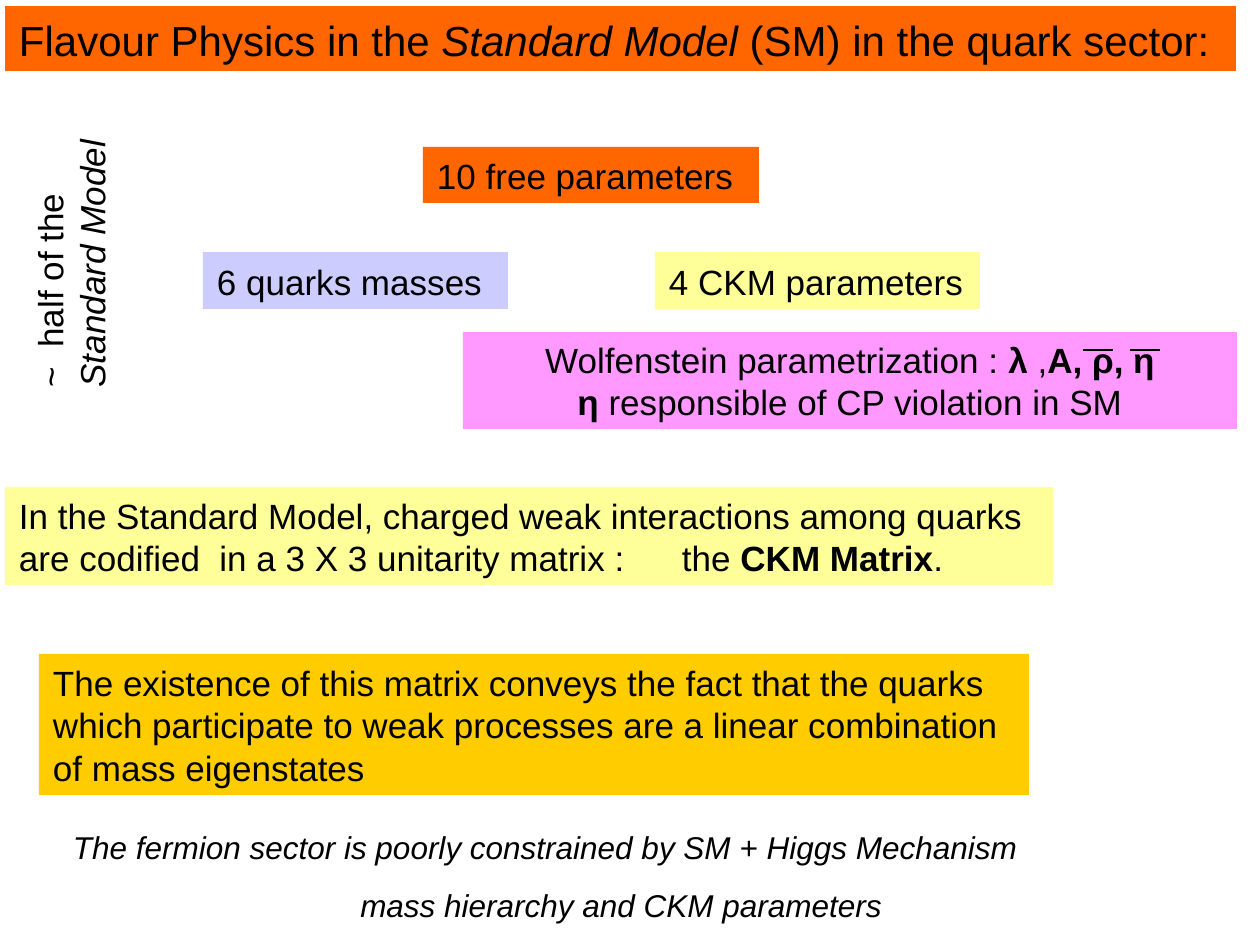
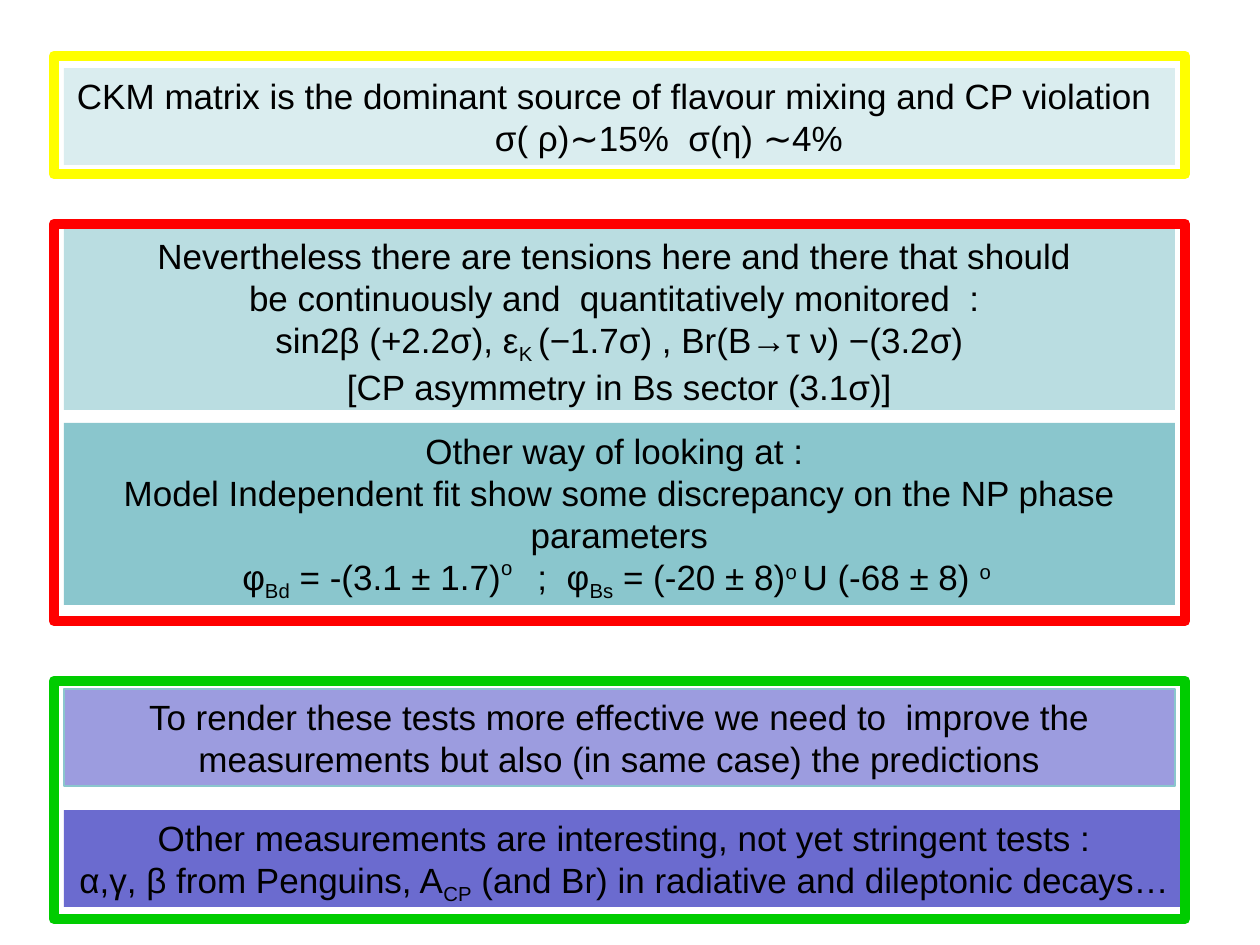
from lxml import etree
from pptx import Presentation
from pptx.dml.color import RGBColor
from pptx.enum import shapes, text
from pptx.oxml.ns import qn
from pptx.util import Pt

PX = 914400 / 126
FONT = "Arial"
BLACK = RGBColor(0x00, 0x00, 0x00)
ORANGE = RGBColor(0xFF, 0x66, 0x00)
LILAC = RGBColor(0xCC, 0xCC, 0xFF)
CREAM = RGBColor(0xFF, 0xFF, 0x99)
PINK = RGBColor(0xFF, 0x99, 0xFF)
GOLD = RGBColor(0xFF, 0xCC, 0x00)
TEAL_PALE = RGBColor(0xDA, 0xED, 0xEF)
TEAL_LIGHT = RGBColor(0xBA, 0xDD, 0xE1)
TEAL = RGBColor(0x8A, 0xC6, 0xCD)
VIOLET_LIGHT = RGBColor(0x9C, 0x9C, 0xDF)
VIOLET = RGBColor(0x6B, 0x6B, 0xCF)
RED = RGBColor(0xFF, 0x00, 0x00)
GREEN = RGBColor(0x00, 0xCC, 0x00)
YELLOW = RGBColor(0xFF, 0xFF, 0x00)

LEFT, CENTER = text.PP_ALIGN.LEFT, text.PP_ALIGN.CENTER
WIDE_INSET, NARROW_INSET = (14, 8), (13, 6)
BOLD, ITALIC = "bold", "italic"


def write(shape, lines, size=20, align=LEFT, inset=WIDE_INSET):
    """Fill a shape with lines of runs; a run is (words, BOLD, ITALIC or a baseline shift in %)."""
    frame = shape.text_frame
    frame.word_wrap = True
    frame.auto_size = text.MSO_AUTO_SIZE.NONE
    frame.vertical_anchor = text.MSO_ANCHOR.TOP
    frame.margin_left = frame.margin_right = round(inset[0] * PX)
    frame.margin_top = frame.margin_bottom = round(inset[1] * PX)
    for number, line in enumerate(lines):
        paragraph = frame.add_paragraph() if number else frame.paragraphs[0]
        paragraph.alignment = align
        for words, style in line:
            run = paragraph.add_run()
            run.text = words
            run.font.name, run.font.size = FONT, Pt(size)
            run.font.color.rgb = BLACK
            run.font.bold, run.font.italic = style == BOLD, style == ITALIC
            if isinstance(style, int):
                run.font._element.set("baseline", str(style * 1000))


def panel(slide, place, fill=None, line=None, width=0.75):
    box = slide.shapes.add_shape(shapes.MSO_SHAPE.RECTANGLE, *(round(v * PX) for v in place))
    box.shadow.inherit = False
    if fill is None:
        box.fill.background()
    else:
        box.fill.solid()
        box.fill.fore_color.rgb = fill
    if line is None:
        box.line.fill.background()
    else:
        box.line.color.rgb = line
        box.line.width = Pt(width)
    return box


deck = Presentation()
deck.slide_width, deck.slide_height = round(1260 * PX), round(945 * PX)

# Slide 1: flavour physics in the Standard Model
flavour = deck.slides.add_slide(deck.slide_layouts[5])
title = flavour.shapes.title
title.left, title.top, title.width, title.height = (round(v * PX) for v in (5, 6, 1231, 65))
title.fill.solid()
title.fill.fore_color.rgb = ORANGE
write(title, [[("Flavour Physics in the ", None), ("Standard Model ", ITALIC),
               ("(SM) in the quark sector:", None)]], size=24)

parameter_counts = [
    ((423, 147, 336, 56), ORANGE, "10 free parameters"),
    ((203, 252, 305, 57), LILAC, "6 quarks masses"),
    ((655, 252, 325, 57), CREAM, "4 CKM parameters"),
]
for place, fill, words in parameter_counts:
    write(panel(flavour, place, fill), [[(words, None)]])

half_of_model = flavour.shapes.add_textbox(*(round(v * PX) for v in (-69, 214, 277, 98)))
half_of_model.rotation = 270
write(half_of_model, [[("~  half of the", None)], [("Standard Model", ITALIC)]])

ckm_matrix = panel(flavour, (5, 487, 1048, 98), CREAM)
write(ckm_matrix, [
    [("In the Standard Model, charged weak interactions among quarks", None)],
    [("are codified  in a 3 X 3 unitarity matrix :\tthe ", None), ("CKM Matrix", BOLD), (".", None)],
])
tab_stops = etree.SubElement(ckm_matrix.text_frame.paragraphs[1]._p.get_or_add_pPr(), qn("a:tabLst"))
etree.SubElement(tab_stops, qn("a:tab"), pos=str(round(663 * PX)), algn="l")

write(panel(flavour, (39, 654, 990, 141), GOLD), [[(words, None)] for words in (
    "The existence of this matrix conveys the fact that the quarks",
    "which participate to weak processes are a linear combination",
    "of mass eigenstates",
)])

closing_remarks = [
    ((59, 820, 982, 52), LEFT, "The fermion sector is poorly constrained by SM + Higgs Mechanism"),
    ((344, 878, 563, 52), CENTER, "mass hierarchy and CKM parameters "),
]
for place, align, words in closing_remarks:
    remark = flavour.shapes.add_textbox(*(round(v * PX) for v in place))
    write(remark, [[(words, ITALIC)]], size=18, align=align)

write(panel(flavour, (463, 332, 774, 97), PINK), [
    [("Wolfenstein parametrization : ", None), ("λ", BOLD), (" ,", None), ("A, ρ, η", BOLD)],
    [("η ", BOLD), ("responsible of CP violation in SM", None)],
], align=CENTER, inset=NARROW_INSET)
for bar_left in (1130, 1083):
    overbar = flavour.shapes.add_connector(
        shapes.MSO_CONNECTOR.STRAIGHT, *(round(v * PX) for v in (bar_left, 350, bar_left + 30, 350)))
    overbar.line.color.rgb = BLACK
    overbar.line.width = Pt(0.75)
    etree.SubElement(overbar._element.spPr, qn("a:effectLst"))

# Slide 2: state of the tests
tests = deck.slides.add_slide(deck.slide_layouts[6])
dominant_source = panel(tests, (64, 68, 1111, 97), TEAL_PALE)
write(dominant_source, [
    [("CKM matrix is the dominant source of flavour mixing and CP violation", None)],
    [("σ( ρ)∼15%  σ(η) ∼4%", None)],
], inset=NARROW_INSET)
precision = dominant_source.text_frame.paragraphs[1]
precision._p.get_or_add_pPr().set("marL", str(round(418 * PX)))

findings = [
    ((64, 228, 1111, 182), TEAL_LIGHT, None, [
        [("Nevertheless there are tensions here and there that should ", None)],
        [("be continuously and  quantitatively monitored  : ", None)],
        [("sin2β (+2.2σ), ε", None), ("K ", -25), ("(−1.7σ) , Br(B→τ ν) −(3.2σ)", None)],
        [("[CP asymmetry in Bs sector (3.1σ)]", None)],
    ]),
    ((64, 423, 1111, 182), TEAL, None, [
        [("Other way of looking at : ", None)],
        [("Model Independent fit show some discrepancy on the NP phase parameters", None)],
        [("φ", None), ("Bd", -25), (" = -(3.1 ± 1.7)", None), ("o ", 42), ("  ;  φ", None),
         ("Bs", -25), (" = (-20 ± 8)", None), ("o ", 30), ("U (-68 ± 8) ", None), ("o ", 30)],
    ]),
    ((64, 689, 1111, 97), VIOLET_LIGHT, TEAL, [
        [("To render these tests more effective we need to  improve the measurements "
          "but also (in same case) the predictions", None)],
    ]),
    ((64, 810, 1121, 97), VIOLET, None, [
        [("Other measurements are interesting, not yet stringent tests :", None)],
        [("α,γ, β from Penguins, A", None), ("CP", -25),
         (" (and Br) in radiative and dileptonic decays… ", None)],
    ]),
]
for place, fill, line, lines in findings:
    write(panel(tests, place, fill, line), lines, align=CENTER, inset=NARROW_INSET)

for frame_top, frame_height, colour in ((224, 397, RED), (681, 238, GREEN), (56, 118, YELLOW)):
    panel(tests, (54, frame_top, 1131, frame_height), line=colour, width=6)

deck.save("out.pptx")
